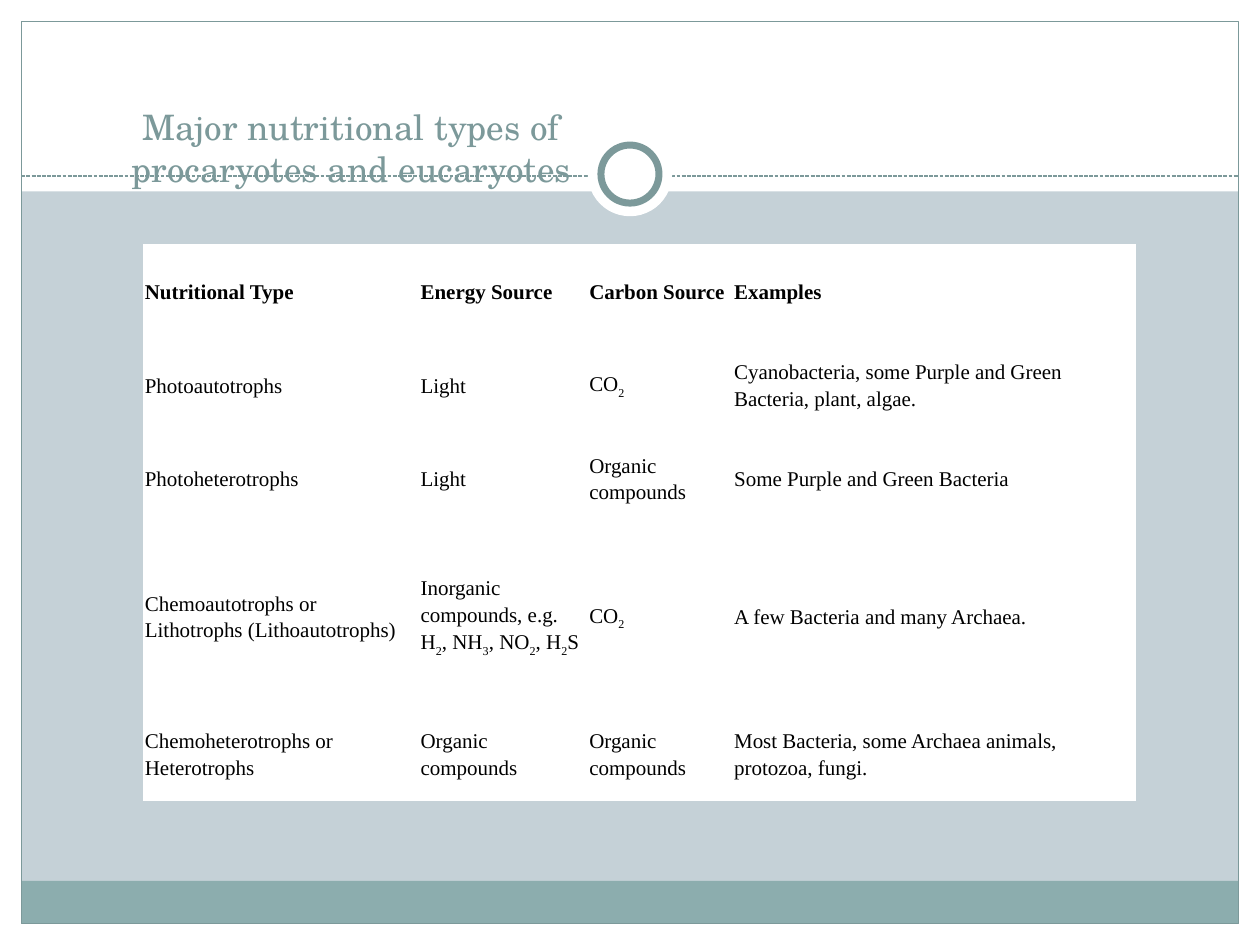
from itertools import groupby

from lxml.etree import SubElement
from pptx import Presentation
from pptx.dml.color import RGBColor
from pptx.enum.dml import MSO_LINE
from pptx.enum.shapes import MSO_CONNECTOR, MSO_SHAPE
from pptx.enum.text import MSO_ANCHOR, MSO_AUTO_SIZE, PP_ALIGN
from pptx.oxml.ns import qn
from pptx.util import Cm, Pt

BACKDROP = RGBColor(0xC5, 0xD1, 0xD7)
WHITE = RGBColor(0xFF, 0xFF, 0xFF)
BLACK = RGBColor(0x00, 0x00, 0x00)
TEAL = RGBColor(0x8C, 0xAD, 0xAE)
SLATE = RGBColor(0x7C, 0x99, 0x9A)

WIDTH, HEIGHT, MARGIN = 25.4, 19.05, 0.43
HEADER_HEIGHT, FOOTER_HEIGHT = 3.86, 0.86
DIVIDER_Y = 3.55
MEDALLION_X, MEDALLION_Y = WIDTH / 2, 3.51

COLUMN_WIDTHS = [5.56, 3.4, 2.92, 8.1]
ROW_HEIGHTS = [1.88, 1.88, 1.88, 3.68, 1.88]
ROWS = [
    ["Nutritional Type", "Energy Source", "Carbon Source", "Examples"],
    ["Photoautotrophs", "Light", "CO2",
     "Cyanobacteria, some Purple and Green Bacteria, plant, algae."],
    ["Photoheterotrophs", "Light", "Organic compounds",
     "Some Purple and Green Bacteria"],
    ["Chemoautotrophs or Lithotrophs (Lithoautotrophs)",
     "Inorganic compounds, e.g. H2, NH3, NO2, H2S", "CO2",
     "A few Bacteria and many Archaea."],
    ["Chemoheterotrophs or Heterotrophs", "Organic compounds",
     "Organic compounds",
     "Most Bacteria, some Archaea animals, protozoa, fungi."],
]


def write(frame, text, *, font, size, color, bold=False,
          align=PP_ALIGN.LEFT, spacing=None):
    paragraph = frame.paragraphs[0]
    paragraph.alignment = align
    paragraph.line_spacing = spacing
    for is_subscript, letters in groupby(text, str.isdigit):
        run = paragraph.add_run()
        run.text = "".join(letters)
        run.font.name = font
        run.font.size = Pt(size)
        run.font.bold = bold
        run.font.color.rgb = color
        if is_subscript:
            run._r.get_or_add_rPr().set("baseline", "-25000")
    return paragraph


def add_panel(slide, left, top, width, height, fill=None, line=None,
              weight=0.75, kind=MSO_SHAPE.RECTANGLE):
    panel = slide.shapes.add_shape(kind, Cm(left), Cm(top), Cm(width), Cm(height))
    panel.shadow.inherit = False
    if fill is None:
        panel.fill.background()
    else:
        panel.fill.solid()
        panel.fill.fore_color.rgb = fill
    if line is None:
        panel.line.fill.background()
    else:
        panel.line.color.rgb = line
        panel.line.width = Pt(weight)


def add_disc(slide, diameter, **style):
    add_panel(slide, MEDALLION_X - diameter / 2, MEDALLION_Y - diameter / 2,
              diameter, diameter, fill=WHITE, kind=MSO_SHAPE.OVAL, **style)


def add_divider(slide):
    divider = slide.shapes.add_connector(
        MSO_CONNECTOR.STRAIGHT,
        Cm(MARGIN), Cm(DIVIDER_Y), Cm(WIDTH - MARGIN), Cm(DIVIDER_Y))
    divider.line.color.rgb = SLATE
    divider.line.width = Pt(0.75)
    divider.line.dash_style = MSO_LINE.SQUARE_DOT
    SubElement(divider.element.spPr, qn("a:effectLst"))


def add_decor(slide):
    inner_width, inner_height = WIDTH - 2 * MARGIN, HEIGHT - 2 * MARGIN
    for border in [
        (0, HEIGHT - MARGIN, WIDTH, MARGIN),
        (0, 0, WIDTH, HEADER_HEIGHT),
        (0, 0, MARGIN, HEIGHT),
        (WIDTH - MARGIN, 0, MARGIN, HEIGHT),
    ]:
        add_panel(slide, *border, fill=WHITE)
    add_panel(slide, MARGIN, HEIGHT - MARGIN - FOOTER_HEIGHT,
              inner_width, FOOTER_HEIGHT, fill=TEAL)
    add_panel(slide, MARGIN, MARGIN, inner_width, inner_height, line=SLATE)
    add_divider(slide)
    add_disc(slide, 1.7)
    add_disc(slide, 1.17, line=SLATE, weight=4)


def place_title(slide, text):
    title = slide.shapes.title
    title.left, title.top = Cm(1.27), Cm(0.76)
    title.width, title.height = Cm(11.63), Cm(3.18)
    frame = title.text_frame
    frame.word_wrap = True
    frame.auto_size = MSO_AUTO_SIZE.NONE
    frame.vertical_anchor = MSO_ANCHOR.BOTTOM
    heading = write(frame, text, font="TeX Gyre Schola", size=20,
                    color=SLATE, align=PP_ALIGN.CENTER)
    heading._p.get_or_add_pPr().set("rtl", "1")
    slide.shapes.element.append(title.element)


def add_nutrition_table(slide):
    table = slide.shapes.add_table(
        len(ROWS), len(COLUMN_WIDTHS), Cm(2.9), Cm(4.93),
        Cm(sum(COLUMN_WIDTHS)), Cm(sum(ROW_HEIGHTS))).table
    table.first_row = table.horz_banding = False
    for column, width in zip(table.columns, COLUMN_WIDTHS):
        column.width = Cm(width)
    for row, height, texts in zip(table.rows, ROW_HEIGHTS, ROWS):
        row.height = Cm(height)
        for cell, text in zip(row.cells, texts):
            cell.fill.solid()
            cell.fill.fore_color.rgb = WHITE
            cell.vertical_anchor = MSO_ANCHOR.MIDDLE
            cell.margin_left = cell.margin_right = Cm(0.02)
            cell.margin_top = cell.margin_bottom = Cm(0.02)
            write(cell.text_frame, text, font="Times New Roman", size=12,
                  color=BLACK, bold=texts is ROWS[0], spacing=1.15)


def main():
    deck = Presentation()
    deck.slide_width, deck.slide_height = Cm(WIDTH), Cm(HEIGHT)
    slide = deck.slides.add_slide(deck.slide_layouts[5])
    slide.background.fill.solid()
    slide.background.fill.fore_color.rgb = BACKDROP
    add_decor(slide)
    place_title(slide, "Major nutritional types of procaryotes and eucaryotes")
    add_nutrition_table(slide)
    deck.save("out.pptx")


if __name__ == "__main__":
    main()
